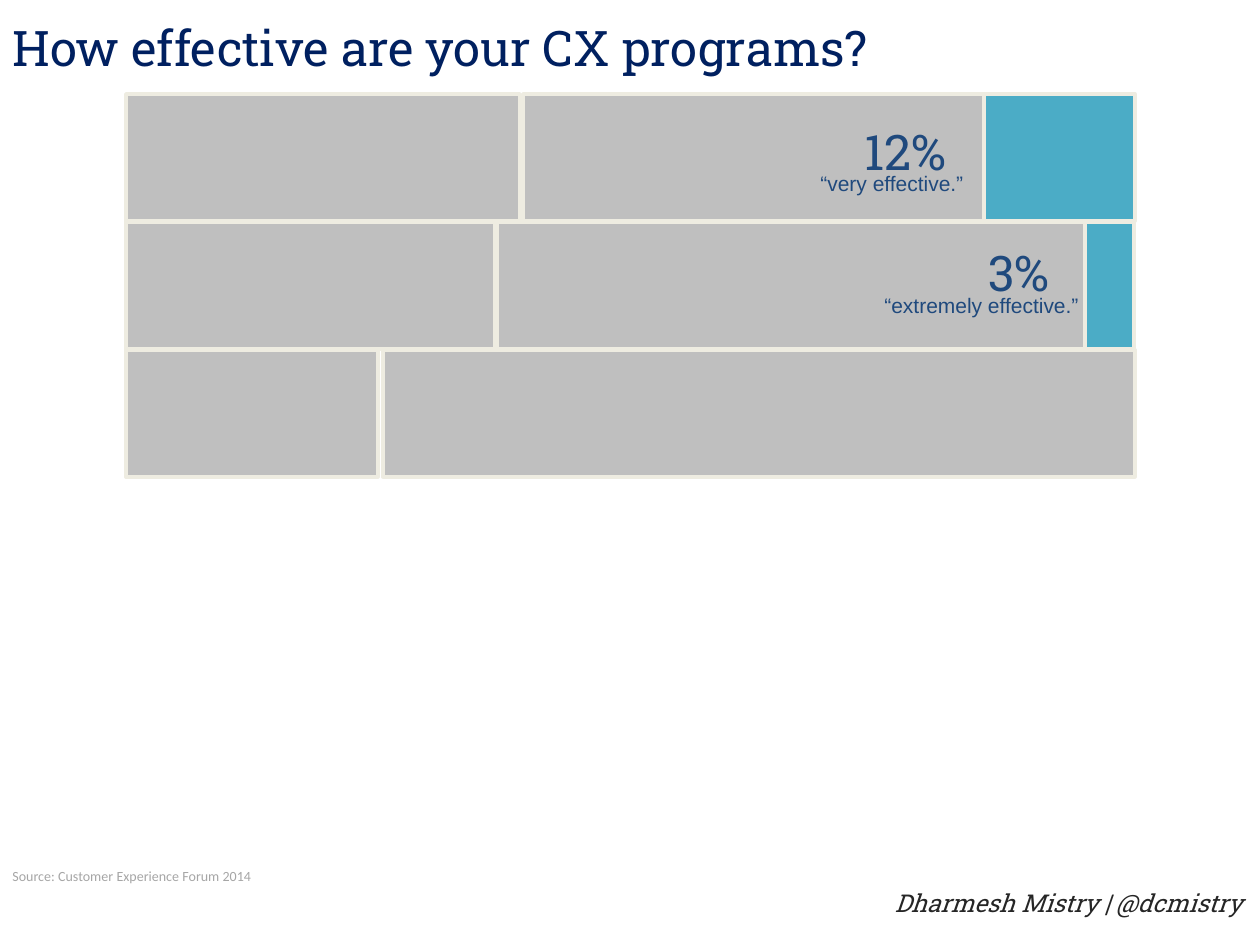
"""Build a slide of effectiveness bars for customer experience programs."""
import pptx
import pptx.util
import pptx.dml.color
import pptx.enum.shapes
import pptx.enum.text

RGBColor = pptx.dml.color.RGBColor
NAVY = RGBColor(0x00, 0x20, 0x60)
BLUE = RGBColor(0x1F, 0x49, 0x7D)
TEAL = RGBColor(0x4B, 0xAC, 0xC6)
GRAY = RGBColor(0xBF, 0xBF, 0xBF)
SOURCE_GRAY = RGBColor(0xA6, 0xA6, 0xA6)
CREAM = RGBColor(0xEE, 0xEC, 0xE1)
CHARCOAL = RGBColor(0x26, 0x26, 0x26)

SLAB = "Roboto Slab"
BAR_TOP = 94
BAR_HEIGHT = 127
ROW_STEP = 128
BAR_ROWS = [
    [(523, 462, GRAY), (126, 394, GRAY), (984, 151, TEAL)],
    [(497, 589, GRAY), (126, 369, GRAY), (1085, 49, TEAL)],
    [(126, 252, GRAY), (383, 752, GRAY)],
]
CALLOUTS = [
    ("12%", 852, 115, "“very effective.”", 808, 164),
    ("3%", 976, 236, "“extremely effective.”", 872, 286),
]


def px(length):
    """Convert pixels to EMU."""
    return pptx.util.Emu(length * 914400 // 126)


def add_bar(slide, left, top, width, color):
    """Add one outlined bar segment."""
    bar = slide.shapes.add_shape(
        pptx.enum.shapes.MSO_SHAPE.RECTANGLE,
        px(left), px(top), px(width), px(BAR_HEIGHT))
    bar.shadow.inherit = False
    bar.fill.solid()
    bar.fill.fore_color.rgb = color
    bar.line.color.rgb = CREAM
    bar.line.width = pptx.util.Pt(2)


def add_text(slide, text, box, font_name, size, color):
    """Add a one-paragraph text box and return its shape."""
    shape = slide.shapes.add_textbox(*map(px, box))
    shape.text_frame.word_wrap = True
    paragraph = shape.text_frame.paragraphs[0]
    paragraph.text = text
    paragraph.font.name = font_name
    paragraph.font.size = pptx.util.Pt(size)
    paragraph.font.color.rgb = color
    return shape


def add_callout(slide, value, value_left, value_top, label, label_left, label_top):
    """Add a large percentage with its small caption."""
    add_text(slide, value, (value_left, value_top, 127, 72), SLAB, 28, BLUE)
    add_text(slide, label, (label_left, label_top, 230, 38), "Arial", 12, BLUE)


def main():
    """Build and save the slide."""
    presentation = pptx.Presentation()
    presentation.slide_width = px(1260)
    presentation.slide_height = px(945)
    slide = presentation.slides.add_slide(presentation.slide_layouts[6])

    title = add_text(slide, "How effective are your CX programs?",
                     (0, 0, 1197, 94), SLAB, 28, NAVY)
    title.text_frame.vertical_anchor = pptx.enum.text.MSO_ANCHOR.MIDDLE
    add_text(slide, "Source: Customer Experience Forum 2014",
             (0, 861, 339, 30), "Calibri", 8, SOURCE_GRAY)

    for row, bars in enumerate(BAR_ROWS):
        for left, width, color in bars:
            add_bar(slide, left, BAR_TOP + row * ROW_STEP, width, color)
    for callout in CALLOUTS:
        add_callout(slide, *callout)

    author = add_text(slide, "Dharmesh Mistry | @dcmistry",
                      (546, 882, 709, 63), SLAB, 14, CHARCOAL)
    paragraph = author.text_frame.paragraphs[0]
    paragraph.alignment = pptx.enum.text.PP_ALIGN.RIGHT
    paragraph.font.italic = True

    presentation.save("out.pptx")


if __name__ == "__main__":
    main()
